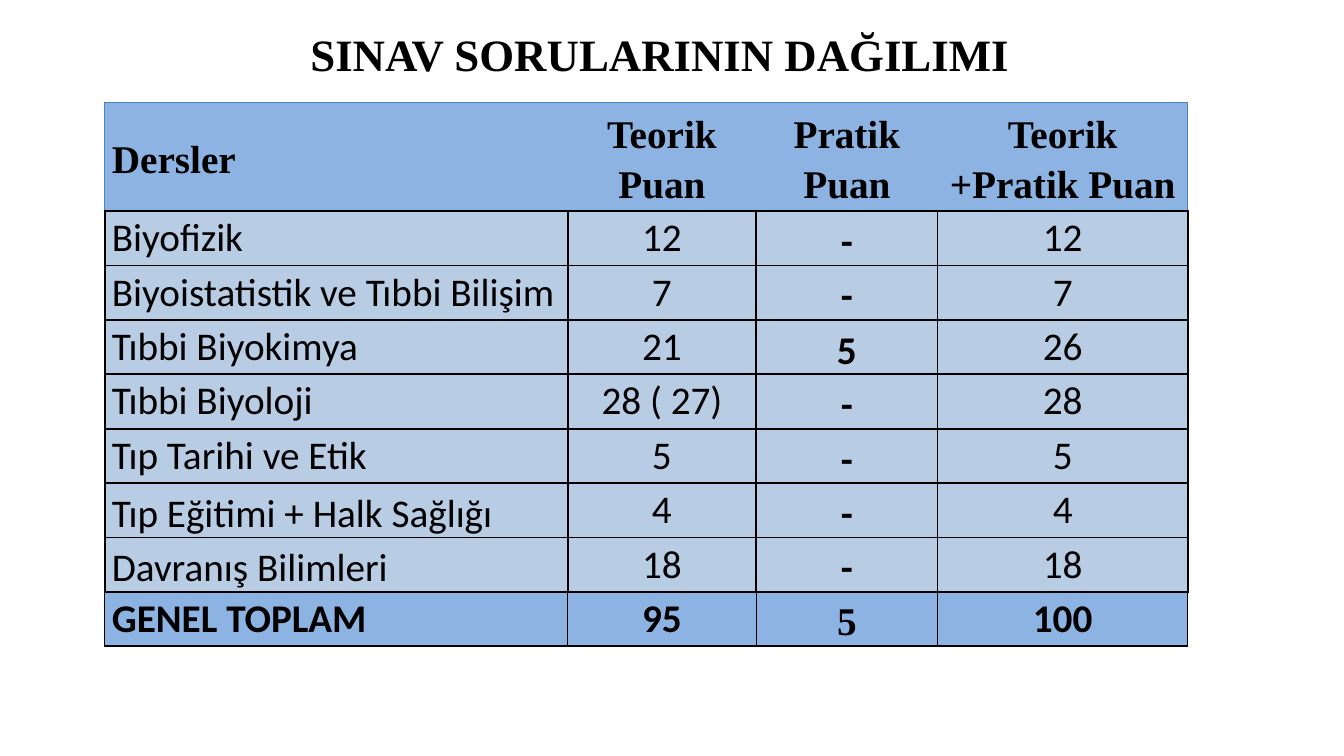
from lxml import etree
from pptx import Presentation
from pptx import util as u
from pptx.dml.color import RGBColor
from pptx.enum import text
from pptx.oxml import ns

COLORS = {"black": "000000", "header": "8DB3E2", "body": "B8CCE4", "edge": "4F81BD"}
SERIF, SANS = "Times New Roman", "Calibri"
COLUMN_WIDTHS = [4.59, 1.87, 1.8, 2.48]
ROW_HEIGHTS = [1.02] + [0.54] * 7 + [0.48]
ROWS = [
    ["Dersler", "Teorik Puan", "Pratik Puan", "Teorik +Pratik Puan"],
    ["Biyofizik", "12", "-", "12"],
    ["Biyoistatistik ve Tıbbi Bilişim", "7", "-", "7"],
    ["Tıbbi Biyokimya", "21", "5", "26"],
    ["Tıbbi Biyoloji", "28 ( 27)", "-", "28"],
    ["Tıp Tarihi ve Etik", "5", "-", "5"],
    ["Tıp Eğitimi + Halk Sağlığı", "4", "-", "4"],
    ["Davranış Bilimleri", "18", "-", "18"],
    ["GENEL TOPLAM", "95", "5", "100"],
]
LAST_ROW, LAST_COLUMN, PRACTICE = len(ROWS) - 1, 3, 2
LOOSE_COURSES = (6, 7)  # course names with wider line spacing


def format_para(para, size, font, bold, align, spacing):
    para.alignment = align
    para.line_spacing = spacing
    for span in para.runs:
        span.font.size = u.Pt(size)
        span.font.name = font
        span.font.bold = bold
        span.font.color.rgb = RGBColor.from_string(COLORS["black"])


def add_title(page, words):
    box = page.shapes.add_textbox(u.Inches(0.85), u.Inches(0.22), u.Inches(11.5), u.Inches(0.7))
    frame = box.text_frame
    frame.word_wrap = True
    frame.vertical_anchor = text.MSO_ANCHOR.MIDDLE
    frame.text = words
    format_para(frame.paragraphs[0], 32, SERIF, True, text.PP_ALIGN.CENTER, 0.9)


def set_borders(cell, borders):
    """Draw the sides L, R, T, B; None leaves a side without a line."""
    properties = cell._tc.get_or_add_tcPr()
    for position, side in enumerate("LRTB"):
        line = etree.Element(ns.qn(f"a:ln{side}"))
        if borders[side]:
            color, width = borders[side]
            line.set("w", str(u.Pt(width)))
            fill = etree.SubElement(line, ns.qn("a:solidFill"))
            etree.SubElement(fill, ns.qn("a:srgbClr")).set("val", COLORS[color])
        else:
            etree.SubElement(line, ns.qn("a:noFill"))
        properties.insert(position, line)


def borders_for(row, column):
    thin, thick, edge = ("black", 1), ("black", 1.5), ("edge", 1)
    if row == 0:
        return {"L": edge if column == 0 else None,
                "R": edge if column == LAST_COLUMN else None,
                "T": edge, "B": thick if column == PRACTICE else thin}
    if row == LAST_ROW:
        return {"L": thin, "R": thin, "T": thick, "B": thin}
    return {"L": thin if column == LAST_COLUMN else thick,
            "R": thin if column == PRACTICE else thick,
            "T": thin if row == 1 and column != PRACTICE else thick,
            "B": thick}


def fill_cell(cell, row, column):
    is_header, is_total = row == 0, row == LAST_ROW
    is_practice = column == PRACTICE
    cell.margin_left = cell.margin_right = u.Inches(0.07)
    cell.margin_top = cell.margin_bottom = 0
    cell.vertical_anchor = text.MSO_ANCHOR.MIDDLE
    cell.fill.solid()
    shade = "header" if is_header or is_total else "body"
    cell.fill.fore_color.rgb = RGBColor.from_string(COLORS[shade])
    set_borders(cell, borders_for(row, column))

    cell.text_frame.text = ROWS[row][column]
    loose = is_header or is_practice or (column == 0 and row in LOOSE_COURSES)
    format_para(
        cell.text_frame.paragraphs[0], 28,
        SERIF if is_header or (is_total and is_practice) else SANS,
        is_header or is_total or is_practice,
        text.PP_ALIGN.LEFT if column == 0 else text.PP_ALIGN.CENTER,
        1.15 if loose else 1.0)


def add_score_table(page):
    frame = page.shapes.add_table(
        len(ROWS), len(COLUMN_WIDTHS), u.Inches(1.04), u.Inches(1.02),
        u.Inches(sum(COLUMN_WIDTHS)), u.Inches(sum(ROW_HEIGHTS)))
    table = frame.table
    table.first_row = table.horz_banding = False
    for column, width in zip(table.columns, COLUMN_WIDTHS):
        column.width = u.Inches(width)
    for row, height in zip(table.rows, ROW_HEIGHTS):
        row.height = u.Inches(height)
    for row in range(len(ROWS)):
        for column in range(len(COLUMN_WIDTHS)):
            fill_cell(table.cell(row, column), row, column)


def main():
    deck = Presentation()
    deck.slide_width, deck.slide_height = u.Inches(13.33), u.Inches(7.5)
    page = deck.slides.add_slide(deck.slide_layouts[6])
    # Heading
    add_title(page, "SINAV SORULARININ DAĞILIMI ")
    # Points per course
    add_score_table(page)
    deck.save("out.pptx")


if __name__ == "__main__":
    main()
